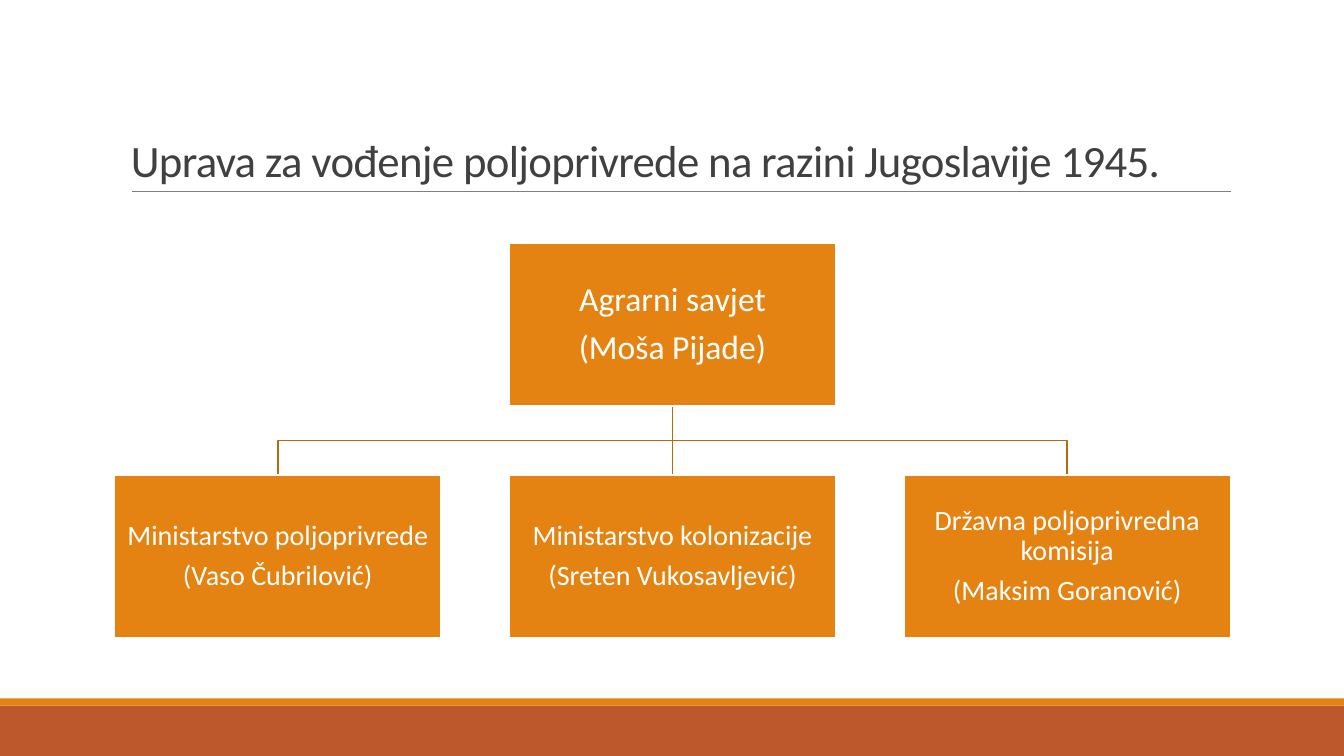
from lxml import etree
from pptx import Presentation
from pptx.dml.color import RGBColor
from pptx.enum import shapes, text
from pptx.oxml.ns import qn
from pptx.util import Inches, Pt

WHITE = RGBColor(0xFF, 0xFF, 0xFF)
ORANGE = RGBColor(0xE4, 0x83, 0x12)
RUST = RGBColor(0xBD, 0x58, 0x2C)
BRANCH = RGBColor(0xB7, 0x69, 0x0E)
RULE = RGBColor(0x80, 0x80, 0x80)
INK = RGBColor(0x40, 0x40, 0x40)

BOX_W, BOX_H = 3.24, 1.62
TOP_Y, LOWER_Y = 2.41, 4.71
CENTRE_X, STEP = 6.67, 3.915
TRUNK_Y, FORK_Y = TOP_Y + BOX_H, 4.37

ministries = [
    ("Ministarstvo poljoprivrede", "(Vaso Čubrilović)"),
    ("Ministarstvo kolonizacije", "(Sreten Vukosavljević)"),
    ("Državna poljoprivredna komisija", "(Maksim Goranović)"),
]
offices = [(CENTRE_X, TOP_Y, 24, 0.02, ("Agrarni savjet", "(Moša Pijade)"))]
for place, words in enumerate(ministries):
    offices.append((CENTRE_X + (place - 1) * STEP, LOWER_Y, 20, 0.01, words))

deck = Presentation()
deck.slide_width, deck.slide_height = Inches(13.33), Inches(7.5)
slide = deck.slides.add_slide(deck.slide_layouts[6])


def add_block(x, y, w, h, color):
    block = slide.shapes.add_shape(
        shapes.MSO_SHAPE.RECTANGLE, Inches(x), Inches(y), Inches(w), Inches(h))
    block.shadow.inherit = False
    block.fill.solid()
    block.fill.fore_color.rgb = color
    block.line.fill.background()
    return block


def add_line(x1, y1, x2, y2, color, width):
    line = slide.shapes.add_connector(
        shapes.MSO_CONNECTOR.STRAIGHT, Inches(x1), Inches(y1), Inches(x2), Inches(y2))
    line.line.color.rgb = color
    line.line.width = Pt(width)
    etree.SubElement(line._element.spPr, qn("a:effectLst"))


add_block(0, 7, 13.33, 0.5, RUST)
add_block(0, 6.93, 13.33, 0.07, ORANGE)
add_line(1.31, 1.9, 12.21, 1.9, RULE, 0.5)

heading = slide.shapes.add_textbox(Inches(1.2), Inches(0.31), Inches(11), Inches(1.59)).text_frame
heading.word_wrap = True
heading.vertical_anchor = text.MSO_ANCHOR.BOTTOM
heading.paragraphs[0].line_spacing = 0.85
title = heading.paragraphs[0].add_run()
title.text = "Uprava za vođenje poljoprivrede na razini Jugoslavije 1945."
title.font.color.rgb = INK
for key, value in {"name": "Calibri", "size": Pt(32)}.items():
    setattr(title.font, key, value)
title.font._element.set("spc", "-50")

for side in (1, -1):
    end_x = CENTRE_X + side * STEP
    route = slide.shapes.build_freeform(Inches(CENTRE_X), Inches(TRUNK_Y))
    route.add_line_segments(
        [(Inches(x), Inches(y)) for x, y in
         ((CENTRE_X, FORK_Y), (end_x, FORK_Y), (end_x, LOWER_Y))], close=False)
    branch = route.convert_to_shape()
    branch.shadow.inherit = False
    branch.fill.background()
    branch.line.color.rgb = BRANCH
    branch.line.width = Pt(1.25)
add_line(CENTRE_X, TRUNK_Y, CENTRE_X, LOWER_Y, BRANCH, 1.25)

for x, y, size, inset, words in offices:
    office = add_block(x - BOX_W / 2, y, BOX_W, BOX_H, ORANGE)
    office.line.color.rgb = WHITE
    office.line.width = Pt(1.25)
    frame = office.text_frame
    frame.word_wrap = True
    frame.vertical_anchor = text.MSO_ANCHOR.MIDDLE
    for edge in ("left", "right", "top", "bottom"):
        setattr(frame, f"margin_{edge}", Inches(inset))
    frame.text = "\n".join(words)
    layout = {"alignment": text.PP_ALIGN.CENTER, "line_spacing": 0.9,
              "space_after": Pt(size * 0.35)}
    for paragraph in frame.paragraphs:
        for key, value in layout.items():
            setattr(paragraph, key, value)
        for run in paragraph.runs:
            run.font.name = "Calibri"
            run.font.size = Pt(size)
            run.font.color.rgb = WHITE

deck.save("out.pptx")
